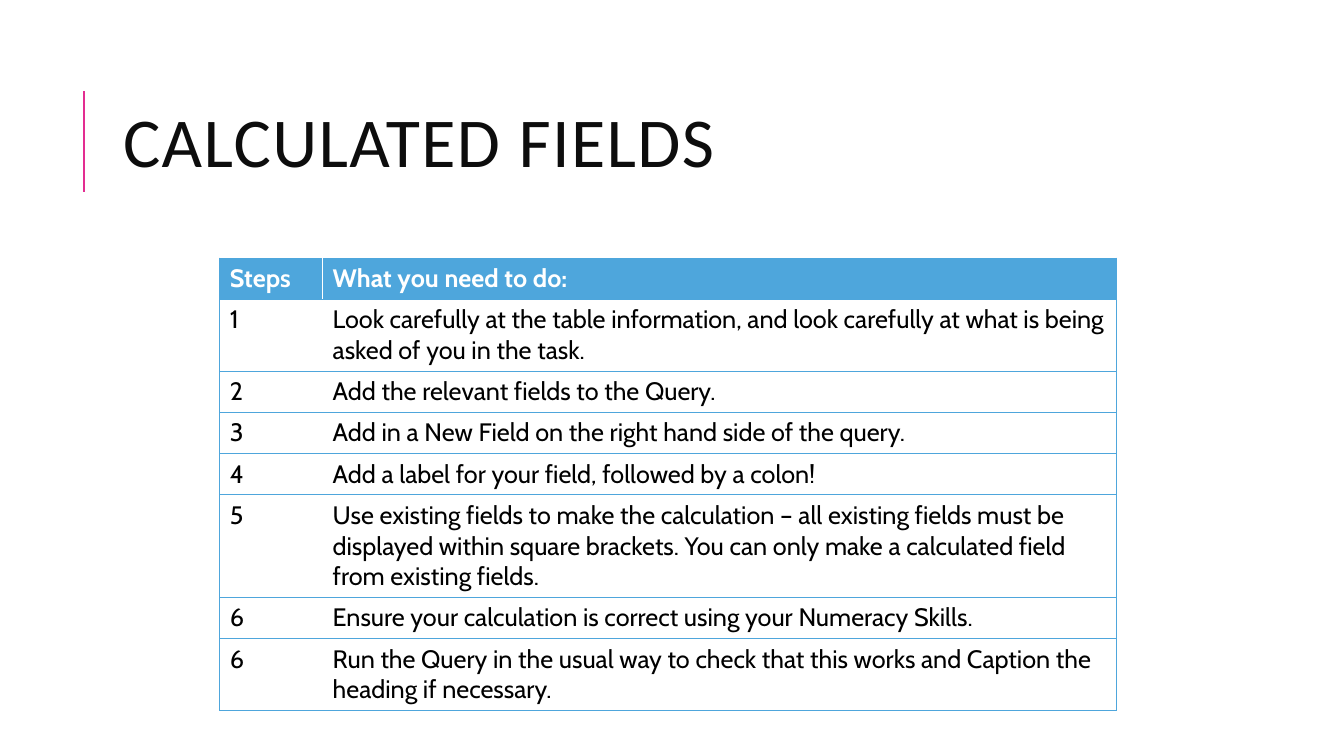
import pptx
import pptx.dml.color
import pptx.enum.shapes
import pptx.enum.text
import pptx.oxml
import pptx.oxml.ns
import pptx.util
from lxml import etree

Inches = pptx.util.Inches
Pt = pptx.util.Pt

TITLE = "CALCULATED FIELDS"
HEADER = ("Steps", "What you need to do:")
# Step number, instruction, lines of text it fills
STEPS = [
    ("1", "Look carefully at the table information, and look carefully at what is being "
          "asked of you in the task.", 2),
    ("2", "Add the relevant fields to the Query.", 1),
    ("3", "Add in a New Field on the right hand side of the query.", 1),
    ("4", "Add a label for your field, followed by a colon!", 1),
    ("5", "Use existing fields to make the calculation – all existing fields must be "
          "displayed within square brackets. You can only make a calculated field "
          "from existing fields.", 3),
    ("6", "Ensure your calculation is correct using your Numeracy Skills.", 1),
    ("6", "Run the Query in the usual way to check that this works and Caption the "
          "heading if necessary.", 2),
]
COLORS = {"accent": "E32D91", "table": "4EA6DC", "title": "0D0D0D",
          "header": "FFFFFF", "body": "000000"}
COLUMN_WIDTHS = (1.02, 7.87)
ROW_HEIGHT, EXTRA_LINE = 0.41, 0.3


def rgb(name):
    return pptx.dml.color.RGBColor.from_string(COLORS[name])


def set_font(para, face, size, color, bold=False):
    para.font.name = face
    para.font.size = Pt(size)
    para.font.bold = bold
    para.font.color.rgb = rgb(color)


def set_borders(cell, sides):
    """Draw thin table-coloured borders; must run before the cell's fill is set."""
    properties = cell._tc.get_or_add_tcPr()
    for side in sides:
        border = etree.SubElement(properties, pptx.oxml.ns.qn(f"a:ln{side}"), w=str(Pt(0.75)))
        fill = etree.SubElement(border, pptx.oxml.ns.qn("a:solidFill"))
        etree.SubElement(fill, pptx.oxml.ns.qn("a:srgbClr"), val=COLORS["table"])


def add_title(page):
    rule = page.shapes.add_connector(pptx.enum.shapes.MSO_CONNECTOR.STRAIGHT,
                                     Inches(0.83), Inches(1.9), Inches(0.83), Inches(0.9))
    rule.line.color.rgb = rgb("accent")
    rule.line.width = Pt(1.5)
    etree.SubElement(rule._element.spPr, pptx.oxml.ns.qn("a:effectLst"))

    title = page.shapes.title
    title.left, title.top = Inches(1.12), Inches(0.64)
    title.width, title.height = Inches(10.63), Inches(1.64)
    frame = title.text_frame
    frame.text = TITLE
    frame.word_wrap = True
    frame.vertical_anchor = pptx.enum.text.MSO_ANCHOR.MIDDLE
    para = frame.paragraphs[0]
    para.alignment = pptx.enum.text.PP_ALIGN.LEFT
    para.line_spacing = 0.8
    set_font(para, "Calibri", 50, "title")
    para.runs[0]._r.get_or_add_rPr().set("spc", "100")


def add_steps_table(page):
    rows = [(*HEADER, 1), *STEPS]
    heights = [ROW_HEIGHT + EXTRA_LINE * (lines - 1) for *_, lines in rows]
    table = page.shapes.add_table(len(rows), len(COLUMN_WIDTHS), Inches(2.18), Inches(2.56),
                                  Inches(sum(COLUMN_WIDTHS)), Inches(sum(heights))).table
    table.horz_banding = False
    for column, width in zip(table.columns, COLUMN_WIDTHS):
        column.width = Inches(width)
    for row_index, (*texts, _) in enumerate(rows):
        table.rows[row_index].height = Inches(heights[row_index])
        is_header = row_index == 0
        for column_index, text in enumerate(texts):
            cell = table.cell(row_index, column_index)
            cell.text = text
            set_borders(cell, "LTB" if column_index == 0 else "RTB")
            if is_header:
                cell.fill.solid()
                cell.fill.fore_color.rgb = rgb("table")
            else:
                cell.fill.background()
            set_font(cell.text_frame.paragraphs[0], "Cabin", 18,
                     "header" if is_header else "body", is_header)


def main():
    deck = pptx.Presentation()
    deck.slide_width, deck.slide_height = Inches(13.33), Inches(7.5)
    page = deck.slides.add_slide(deck.slide_layouts[5])
    add_title(page)
    add_steps_table(page)
    deck.save("out.pptx")


if __name__ == "__main__":
    main()
